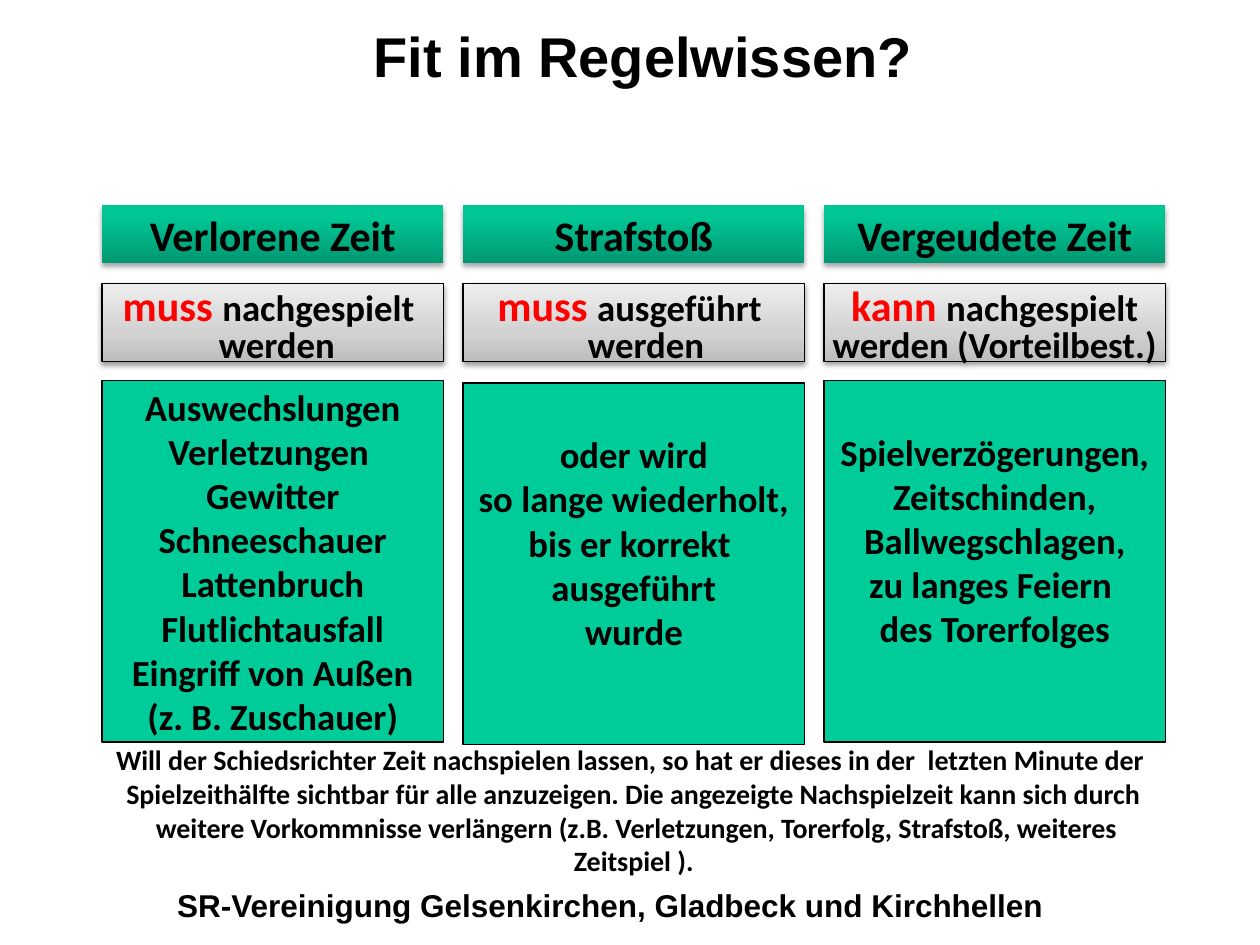
from lxml.etree import SubElement as Sub
from pptx import Presentation
from pptx.dml.color import RGBColor as RGB
from pptx.enum.shapes import MSO_SHAPE as SHAPE
from pptx.enum.text import MSO_ANCHOR as ANCHOR, PP_ALIGN as ALIGN
from pptx.oxml.ns import qn
from pptx.util import Pt

COLORS = {"text": "000000", "stress": "FF0000", "green": "00CC99", "line": "000000"}
GREEN_GRADIENT = [(0, "009872"), (80, "00C694"), (100, "00C795")]
GREY_GRADIENT = [(0, "BDBDBD"), (35, "D1D1D1"), (100, "EEEEEE")]

LEFT, PITCH, WIDTH = 58.3, 206.3, 195.1

COLUMNS = [
    {
        "head": "Verlorene Zeit",
        "rule": ("muss ", "nachgespielt ", " werden", 0),
        "top": 217.4,
        "bottom_inset": 3.6,
        "lines": ["Auswechslungen", "Verletzungen ", "Gewitter", "Schneeschauer", "Lattenbruch",
                  "Flutlichtausfall", "Eingriff von Außen", "(z. B. Zuschauer)"],
    },
    {
        "head": "Strafstoß",
        "rule": ("muss ", "ausgeführt ", "werden", 14),
        "top": 218.9,
        "bottom_inset": 28,
        "lines": ["oder wird", "so lange wiederholt,", "bis er korrekt ", "ausgeführt", "wurde"],
    },
    {
        "head": "Vergeudete Zeit",
        "rule": ("kann ", "nachgespielt", "werden (Vorteilbest.)", 0),
        "top": 217.4,
        "bottom_inset": 28,
        "lines": ["Spielverzögerungen,", "Zeitschinden,", "Ballwegschlagen,",
                  "zu langes Feiern ", "des Torerfolges"],
    },
]

NOTE = [
    "Will der Schiedsrichter Zeit nachspielen lassen, so hat er dieses in der  letzten Minute der ",
    "Spielzeithälfte sichtbar für alle anzuzeigen. Die angezeigte Nachspielzeit kann sich durch",
    " weitere Vorkommnisse verlängern (z.B. Verletzungen, Torerfolg, Strafstoß, weiteres Zeitspiel ).",
]


class SlideBuilder:
    def __init__(self, slide):
        self.slide = slide

    def add_text(self, p, text, size, font="Calibri", color="text"):
        p.alignment = ALIGN.CENTER
        r = p.add_run()
        r.text = text
        for name, value in {"name": font, "size": Pt(size), "bold": True}.items():
            setattr(r.font, name, value)
        r.font.color.rgb = RGB.from_string(COLORS[color])

    def fill_text(self, sp, lines, size, font="Calibri", wrap=False, anchor=ANCHOR.MIDDLE):
        tf = sp.text_frame
        for name, value in {"word_wrap": wrap, "vertical_anchor": anchor}.items():
            setattr(tf, name, value)
        for i, line in enumerate(lines):
            p = tf.add_paragraph() if i else tf.paragraphs[0]
            self.add_text(p, line, size, font)
        return tf

    def title(self, text, *box):
        sp = self.slide.shapes.title
        for name, value in zip(("left", "top", "width", "height"), box):
            setattr(sp, name, Pt(value))
        self.fill_text(sp, [text], 32, "Arial", anchor=ANCHOR.TOP)

    def text(self, lines, size, *box, **style):
        sp = self.slide.shapes.add_textbox(*map(Pt, box))
        self.fill_text(sp, lines, size, **style)

    def box(self, *box, fill, outline=True):
        sp = self.slide.shapes.add_shape(SHAPE.RECTANGLE, *map(Pt, box))
        sp.shadow.inherit = False
        if isinstance(fill, str):
            sp.fill.solid()
            sp.fill.fore_color.rgb = RGB.from_string(COLORS[fill])
        else:
            self.gradient(sp, fill)
        if outline:
            sp.line.color.rgb = RGB.from_string(COLORS["line"])
            sp.line.width = Pt(0.75)
        else:
            sp.line.fill.background()
        return sp

    def gradient(self, sp, stops):
        sp.fill.gradient()
        sp.fill.gradient_angle = 90
        gs_list = sp._element.spPr.find(".//" + qn("a:gsLst"))
        for gs in list(gs_list):
            gs_list.remove(gs)
        for position, color in stops:
            gs = Sub(gs_list, qn("a:gs"), pos=str(position * 1000))
            Sub(gs, qn("a:srgbClr"), val=color)

    def shadow(self, sp, alpha, distance):
        effects = sp._element.spPr.find(qn("a:effectLst"))
        shadow = Sub(effects, qn("a:outerShdw"), blurRad=str(Pt(3.1)), dist=str(Pt(distance)),
                     dir="5400000", rotWithShape="0")
        color = Sub(shadow, qn("a:srgbClr"), val="000000")
        Sub(color, qn("a:alpha"), val=str(alpha * 1000))

    def header(self, text, left):
        sp = self.box(left, 117.4, WIDTH, 33.1, fill=GREEN_GRADIENT, outline=False)
        self.shadow(sp, 35, 1.8)
        self.fill_text(sp, [text], 24)

    def rule(self, parts, left):
        stress, rest, second, indent = parts
        sp = self.box(left, 162, WIDTH, 44.6, fill=GREY_GRADIENT)
        self.shadow(sp, 38, 1.6)
        tf = self.fill_text(sp, [], 21)
        p = tf.paragraphs[0]
        self.add_text(p, stress, 24, color="stress")
        self.add_text(p, rest, 21)
        p = tf.add_paragraph()
        self.add_text(p, second, 21)
        p.line_spacing = 0.8
        if indent:
            p._p.get_or_add_pPr().set("marL", str(Pt(indent)))

    def details(self, lines, left, top, bottom_inset):
        sp = self.box(left, top, WIDTH, 206.6, fill="green")
        tf = self.fill_text(sp, lines, 21)
        tf.margin_bottom = Pt(bottom_inset)


def main():
    prs = Presentation()
    prs.slide_width, prs.slide_height = Pt(720), Pt(540)
    s = SlideBuilder(prs.slides.add_slide(prs.slide_layouts[5]))
    s.title("Fit im Regelwissen?", 205.2, 8.6, 324.7, 46)
    for i, column in enumerate(COLUMNS):
        left = LEFT + i * PITCH
        s.header(column["head"], left)
        s.rule(column["rule"], left)
        s.details(column["lines"], left, column["top"], column["bottom_inset"])
    s.text(NOTE, 16, LEFT, 417.6, 607.7, 90.7)
    s.text(["SR-Vereinigung Gelsenkirchen, Gladbeck und Kirchhellen"], 18,
           65.5, 502.6, 566.6, 28.8, font="Arial", wrap=True, anchor=ANCHOR.TOP)
    prs.save("out.pptx")


if __name__ == "__main__":
    main()
